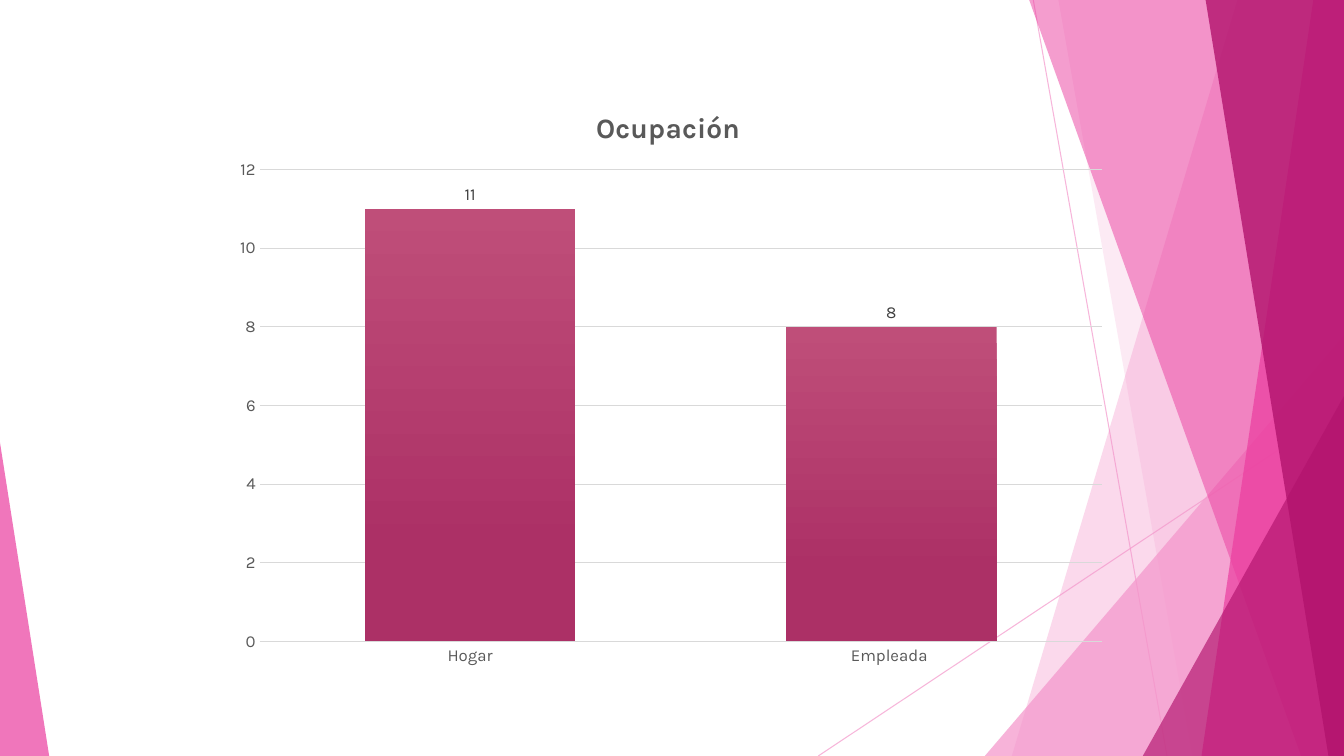
from lxml.etree import SubElement
from pptx import Presentation
from pptx.chart.data import CategoryChartData
from pptx.dml.color import RGBColor
from pptx.enum.chart import XL_CHART_TYPE as Kind, XL_LABEL_POSITION as Spot, XL_TICK_MARK as Tick
from pptx.enum.shapes import MSO_CONNECTOR as Link, MSO_SHAPE as Shape
from pptx.oxml import parse_xml
from pptx.oxml.ns import nsdecls, qn
from pptx.util import Cm, Pt

PALE = RGBColor(0xF4, 0x96, 0xCB)
PINK = RGBColor(0xEB, 0x3D, 0x9F)
DEEP = RGBColor(0xB2, 0x13, 0x6D)
GRID = RGBColor(0xD9, 0xD9, 0xD9)
GREY = RGBColor(0x59, 0x59, 0x59)
DARK = RGBColor(0x40, 0x40, 0x40)
ROSE = RGBColor(0xBF, 0x4E, 0x79)
WINE = RGBColor(0xAC, 0x30, 0x66)
FONT = "Karla"
WIDE, HIGH = 33.87, 19.05


def fade(shape, alpha):
    tint = shape.element.spPr.find(".//" + qn("a:srgbClr"))
    SubElement(tint, qn("a:alpha")).set("val", str(alpha * 1000))


def style(font, size, color, bold=False):
    font.name, font.size, font.bold = FONT, Pt(size), bold
    font.color.rgb = color


deck = Presentation()
deck.slide_width, deck.slide_height = Cm(WIDE), Cm(HIGH)
slide = deck.slides.add_slide(deck.slide_layouts[6])
shapes = slide.shapes

# Thin crossing lines
for x1, y1, x2 in [(26.04, 0, 29.41), (WIDE, 10.24, 20.62)]:
    line = shapes.add_connector(Link.STRAIGHT, Cm(x1), Cm(y1), Cm(x2), Cm(HIGH))
    line.line.color.rgb = PALE
    line.line.width = Pt(0.75)
    fade(line, 70)
    SubElement(line.element.spPr, qn("a:effectLst"))

# Bands (top x, bottom x) reach the right edge; wedges (left, top, width, apex) the bottom
facets = [
    ((31.19, 25.5), PALE, 36),
    ((26.67, 30.05), PALE, 20),
    ((24.82, 8.46, 9.05, 1), PALE, 72),
    ((25.93, 32.79), PINK, 50),
    ((33.1, 30.28), PINK, 70),
    ((30.38, 33.48), DEEP, 80),
    ((28.8, 9.98, 5.07, 1), DEEP, 66),
    ((0, 11.15, 1.24, 0), PINK, 70),
]
for spots, color, alpha in facets:
    if len(spots) == 2:
        head, foot = spots
        path = shapes.build_freeform(Cm(head), Cm(-0.02))
        ends = [(WIDE, -0.02), (WIDE, HIGH), (foot, HIGH)]
        path.add_line_segments([(Cm(x), Cm(y)) for x, y in ends])
        facet = path.convert_to_shape()
    else:
        left, top, width, apex = spots
        facet = shapes.add_shape(Shape.ISOSCELES_TRIANGLE, Cm(left), Cm(top), Cm(width), Cm(HIGH - top))
        facet.adjustments[0] = apex
    facet.shadow.inherit = False
    facet.fill.solid()
    facet.fill.fore_color.rgb = color
    facet.line.fill.background()
    fade(facet, alpha)

# Column chart
data = CategoryChartData()
data.categories = ["Hogar", "Empleada "]
data.add_series("Series 1", [11, 8])
chart = shapes.add_chart(Kind.COLUMN_CLUSTERED, Cm(5.64), Cm(2.01), Cm(22.58), Cm(15.06), data).chart
chart.has_legend = False
chart.font.name, chart.font.size = FONT, Pt(10)

# Title
title = chart.chart_title
para = title.text_frame.paragraphs[0]
para.text = "Ocupación"
style(para.font, 20, GREY, True)

# Axes
base, scale = chart.category_axis, chart.value_axis
for axis in (base, scale):
    axis.major_tick_mark = axis.minor_tick_mark = Tick.NONE
    style(axis.tick_labels.font, 12, GREY)
base.format.line.color.rgb = GRID
base.format.line.width = Pt(1)
scale.minimum_scale, scale.maximum_scale, scale.major_unit = 0, 12, 2
scale.format.line.fill.background()
scale.major_gridlines.format.line.color.rgb = GRID
scale.major_gridlines.format.line.width = Pt(0.75)

# Columns and their labels
plot = chart.plots[0]
plot.gap_width, plot.overlap, plot.vary_by_categories = 100, -24, False
fill = plot.series[0].format.fill
fill.gradient()
fill.gradient_angle = 270
for stop, color, place in zip(fill.gradient_stops, (ROSE, WINE), (0, 0.78)):
    stop.color.rgb = color
    stop.position = place
plot.has_data_labels = True
labels = plot.data_labels
labels.show_value, labels.position = True, Spot.OUTSIDE_END
style(labels.font, 12, DARK)

# Fixed places of title and plot, as shares of the chart
area = chart.element.find(".//" + qn("c:plotArea"))
for part, index, sizes in [
    (title.format.fill and chart.element.find(".//" + qn("c:title")), 1, {"x": 0.41, "y": 0.04}),
    (area, 0, {"x": 0.04, "y": 0.15, "w": 0.94, "h": 0.79}),
]:
    for old in part.findall(qn("c:layout")):
        part.remove(old)
    layout = parse_xml(f"<c:layout {nsdecls('c')}><c:manualLayout/></c:layout>")
    part.insert(index, layout)
    if part is area:
        SubElement(layout[0], qn("c:layoutTarget")).set("val", "inner")
    for mode in "xy":
        SubElement(layout[0], qn(f"c:{mode}Mode")).set("val", "edge")
    for name, share in sizes.items():
        SubElement(layout[0], qn(f"c:{name}")).set("val", str(share))

# Clear backgrounds
clear = f"<c:spPr {nsdecls('c', 'a')}><a:noFill/><a:ln><a:noFill/></a:ln></c:spPr>"
area.append(parse_xml(clear))
chart.element.find(qn("c:txPr")).addprevious(parse_xml(clear))

deck.save("out.pptx")
